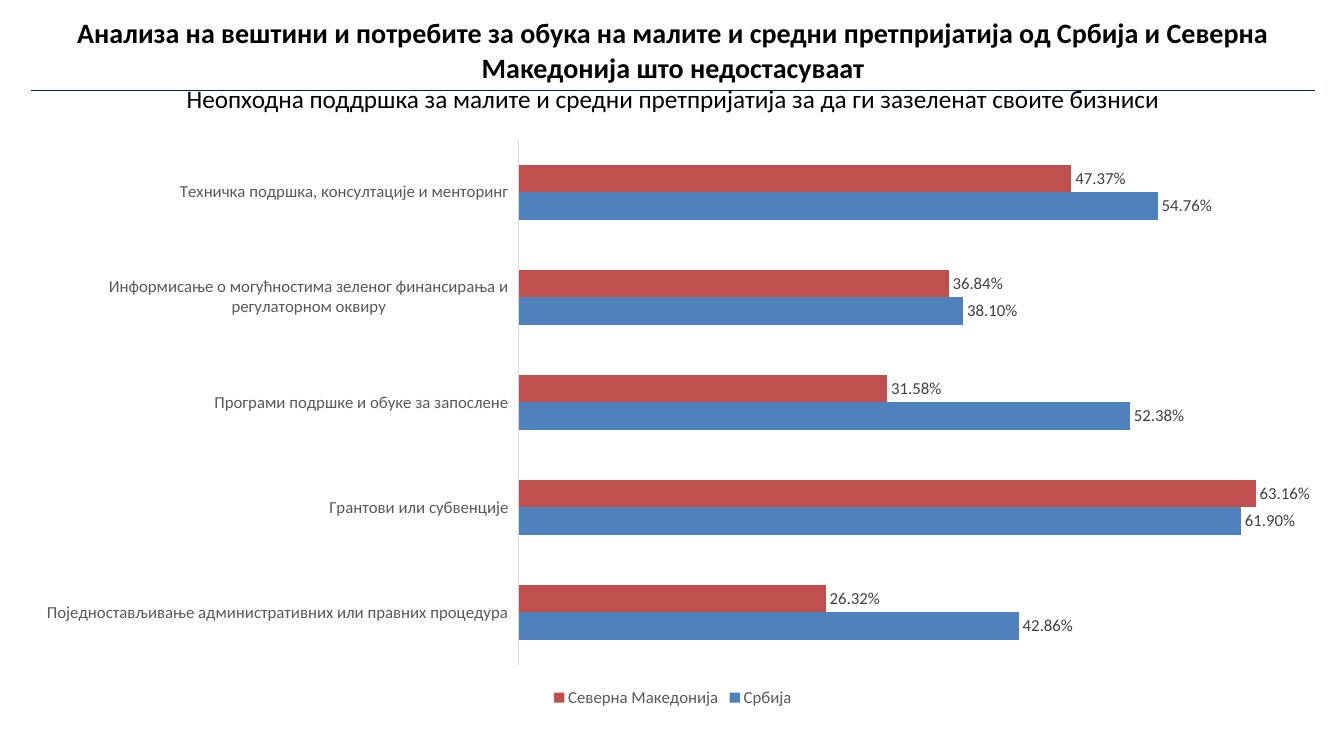
from dataclasses import dataclass

from lxml.etree import SubElement
from pptx import Presentation
from pptx.chart.chart import Chart
from pptx.chart.data import CategoryChartData
from pptx.dml.color import RGBColor
from pptx.enum.chart import XL_CHART_TYPE as ChartType
from pptx.enum.chart import XL_LABEL_POSITION as LabelPosition
from pptx.enum.chart import XL_LEGEND_POSITION as LegendPosition
from pptx.enum.chart import XL_TICK_LABEL_POSITION as TickLabels
from pptx.enum.chart import XL_TICK_MARK as TickMark
from pptx.enum.text import MSO_AUTO_SIZE as AutoSize
from pptx.enum.text import PP_ALIGN as Align
from pptx.oxml import parse_xml
from pptx.oxml.ns import nsdecls, qn
from pptx.slide import Slide
from pptx.table import _Cell as Cell
from pptx.text.text import Font, TextFrame
from pptx.util import Inches, Pt

COLORS = {
    "text": "000000",
    "axis_text": "595959",
    "label_text": "404040",
    "axis_line": "D9D9D9",
    "rule": "002060",
    "white": "FFFFFF",
    "serbia": "4F81BD",
    "macedonia": "C0504D",
}
FONT = "Calibri"
PERCENT = "0.00%"
LEFT, WIDTH = Inches(0.3), Inches(12.75)

TITLE = (
    "Анализа на вештини и потребите за обука на малите и средни "
    "претпријатија од Србија и Северна Македонија што недостасуваат"
)
SUBTITLE = (
    "Неопходна поддршка за малите и средни претпријатија "
    "за да ги зазеленат своите бизниси"
)
SUPPORT_TYPES = [
    "Поједностављивање административних или правних процедура",
    "Грантови или субвенције",
    "Програми подршке и обуке за запослене",
    "Информисање о могућностима зеленог финансирања и регулаторном оквиру",
    "Техничка подршка, консултације и менторинг",
]


@dataclass(frozen=True)
class Country:
    name: str
    shares: tuple[float, ...]
    color: str


COUNTRIES = [
    Country("Србија", (0.4286, 0.619, 0.5238, 0.381, 0.5476), "serbia"),
    Country("Северна Македонија", (0.2632, 0.6316, 0.3158, 0.3684, 0.4737), "macedonia"),
]


def rgb(color: str) -> RGBColor:
    return RGBColor.from_string(COLORS[color])


def style_font(font: Font, size: int, color: str, bold: bool = False) -> None:
    font.name = FONT
    font.size = Pt(size)
    font.bold = bold
    font.color.rgb = rgb(color)


def write_centred(frame: TextFrame, text: str, size: int, bold: bool = False) -> None:
    frame.text = text
    paragraph = frame.paragraphs[0]
    paragraph.alignment = Align.CENTER
    style_font(paragraph.runs[0].font, size, "text", bold)


def set_borders(cell: Cell, colors: dict[str, str]) -> None:
    """Give each side a one-point line; sides go in the order L, R, T, B."""
    properties = cell._tc.get_or_add_tcPr()
    for position, (side, color) in enumerate(colors.items()):
        line = parse_xml(
            f'<a:ln{side} {nsdecls("a")} w="{Pt(1)}"><a:solidFill>'
            f'<a:srgbClr val="{COLORS[color]}"/></a:solidFill></a:ln{side}>'
        )
        properties.insert(position, line)


def add_title(slide: Slide) -> None:
    height = Inches(0.77)
    title_table = slide.shapes.add_table(1, 1, LEFT, Inches(0.12), WIDTH, height).table
    cell = title_table.cell(0, 0)
    write_centred(cell.text_frame, TITLE, 20, bold=True)
    cell.fill.background()
    set_borders(cell, {"L": "white", "R": "white", "T": "white", "B": "rule"})


def add_subtitle(slide: Slide) -> None:
    box = slide.shapes.add_textbox(LEFT, Inches(0.78), WIDTH, Inches(0.4))
    frame = box.text_frame
    frame.word_wrap = True
    frame.auto_size = AutoSize.SHAPE_TO_FIT_TEXT
    write_centred(frame, SUBTITLE, 18)


def place_plot(chart: Chart, x: float, y: float, w: float, h: float) -> None:
    """Fix the inner plot area, in fractions of the chart."""
    plot_area = chart._chartSpace.chart.plotArea
    for automatic in plot_area.findall(qn("c:layout")):
        plot_area.remove(automatic)
    layout = parse_xml(f'<c:layout {nsdecls("c")}><c:manualLayout/></c:layout>')
    settings = {
        "layoutTarget": "inner", "xMode": "edge", "yMode": "edge",
        "x": x, "y": y, "w": w, "h": h,
    }
    for tag, value in settings.items():
        SubElement(layout[0], qn(f"c:{tag}")).set("val", str(value))
    plot_area.insert(0, layout)


def add_support_chart(slide: Slide) -> None:
    data = CategoryChartData(number_format=PERCENT)
    data.categories = SUPPORT_TYPES
    for country in COUNTRIES:
        data.add_series(country.name, country.shares)
    chart = slide.shapes.add_chart(
        ChartType.BAR_CLUSTERED, LEFT, Inches(1.27), WIDTH, Inches(5.79), data
    ).chart
    style_font(chart.font, 12, "text")
    chart.has_title = False
    place_plot(chart, 0.38, 0.02, 0.59, 0.9)

    # Axes
    support_axis = chart.category_axis
    support_axis.major_tick_mark = TickMark.NONE
    support_axis.minor_tick_mark = TickMark.NONE
    support_axis.tick_label_position = TickLabels.LOW
    support_axis.format.line.color.rgb = rgb("axis_line")
    support_axis.format.line.width = Pt(0.75)
    style_font(support_axis.tick_labels.font, 12, "axis_text")
    share_axis = chart.value_axis
    share_axis.minimum_scale, share_axis.maximum_scale = 0, 0.65
    share_axis.has_major_gridlines = False
    share_axis.visible = False

    # Bars and their labels
    plot = chart.plots[0]
    plot.gap_width = 182
    plot.overlap = 0
    plot.vary_by_categories = False
    for country, bars in zip(COUNTRIES, plot.series):
        bars.format.fill.solid()
        bars.format.fill.fore_color.rgb = rgb(country.color)
        bars.invert_if_negative = False
        labels = bars.data_labels
        labels.show_value = True
        labels.position = LabelPosition.OUTSIDE_END
        labels.number_format = PERCENT
        labels.number_format_is_linked = False
        style_font(labels.font, 12, "label_text")

    # Legend
    chart.has_legend = True
    chart.legend.position = LegendPosition.BOTTOM
    chart.legend.include_in_layout = False
    style_font(chart.legend.font, 12, "axis_text")


def main() -> None:
    presentation = Presentation()
    presentation.slide_width = Inches(13.33)
    presentation.slide_height = Inches(7.5)
    slide = presentation.slides.add_slide(presentation.slide_layouts[6])
    add_title(slide)
    add_support_chart(slide)
    add_subtitle(slide)
    presentation.save("out.pptx")


if __name__ == "__main__":
    main()
